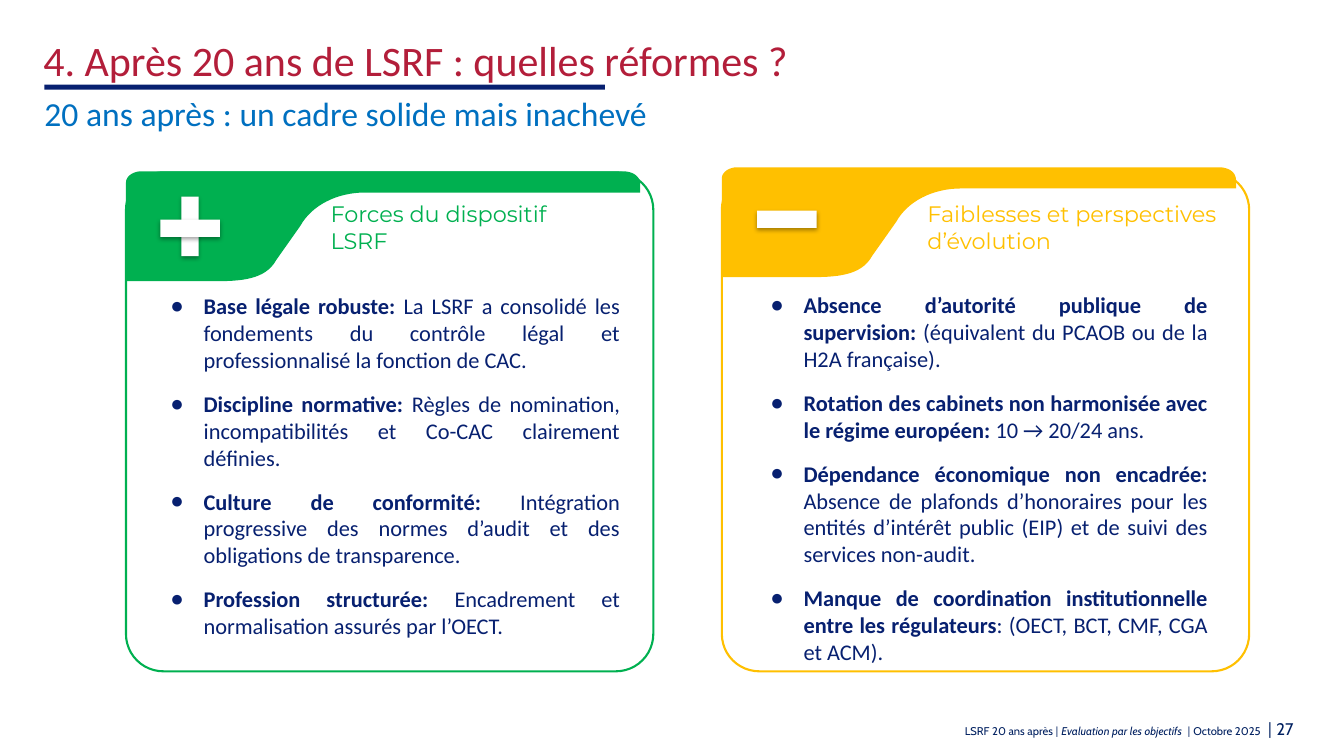
from lxml import etree
from pptx import Presentation
from pptx.dml.color import RGBColor
from pptx.enum.shapes import MSO_SHAPE as Shape
from pptx.enum.text import MSO_ANCHOR as Anchor, MSO_AUTO_SIZE as AutoSize, PP_ALIGN as Align
from pptx.oxml import parse_xml
from pptx.oxml.ns import nsdecls, qn
from pptx.util import Inches, Pt

NAVY = RGBColor(0x07, 0x20, 0x70)
FOOTER_NAVY = RGBColor(0x00, 0x20, 0x60)
BLUE = RGBColor(0x00, 0x70, 0xC0)
RED = RGBColor(0xB3, 0x1E, 0x3A)
GREEN = RGBColor(0x00, 0xB0, 0x50)
AMBER = RGBColor(0xFF, 0xC0, 0x00)
WHITE = RGBColor(0xFF, 0xFF, 0xFF)

STRENGTHS = [
    ("Base légale robuste: ", "La LSRF a consolidé les fondements du contrôle légal et "
     "professionnalisé la fonction de CAC."),
    ("Discipline normative: ", "Règles de nomination, incompatibilités et Co-CAC "
     "clairement définies."),
    ("Culture de conformité:", " Intégration progressive des normes d’audit et des "
     "obligations de transparence."),
    ("Profession structurée: ", "Encadrement et normalisation assurés par l’OECT."),
]
WEAKNESSES = [
    ("Absence d’autorité publique de supervision: ",
     "(équivalent du PCAOB ou de la H2A française)."),
    ("Rotation des cabinets non harmonisée avec le régime européen: ", "10 → 20/24 ans."),
    ("Dépendance économique non encadrée: ", "Absence de plafonds d’honoraires pour les "
     "entités d’intérêt public (EIP) et de suivi des services non-audit."),
    ("Manque de coordination institutionnelle entre les régulateurs",
     ": (OECT, BCT, CMF, CGA et ACM)."),
]
FOOTER = [  # text, font, size, italic
    ("LSRF 20 ans après ", "Cabin", 8, False),
    ("| ", "Lato", 8, False),
    ("Evaluation par les objectifs ", "Cabin", 8, True),
    (" | ", "Lato", 8, False),
    ("Octobre 2025 ", "Cabin", 8, False),
    (" | ", "Lato", 12, False),
    ("27", "Cabin", 12, False),
]
# Header outline: two coordinates make a line, six make a Bézier curve
TAB_START = (5.1, 0.13)
TAB_STEPS = [
    (5.1, 0.21), (2.37, 0.21), (2.09, 0.21, 1.84, 0.34, 1.73, 0.54),
    (1.49, 0.88), (1.38, 1.08, 1.13, 1.09, 0.85, 1.09),
    (0, 1.09), (0, 0.11), (0, 0.05, 0.07, 0, 0.15, 0),
    (4.93, 0), (5.03, 0, 5.1, 0.05, 5.1, 0.13),
]


def place(box, left, top, width, height):
    box.left, box.top = Inches(left), Inches(top)
    box.width, box.height = Inches(width), Inches(height)


def set_frame(frame, insets, anchor=Anchor.TOP):
    frame.word_wrap = True
    frame.auto_size = AutoSize.NONE
    frame.vertical_anchor = anchor
    (frame.margin_left, frame.margin_top,
     frame.margin_right, frame.margin_bottom) = [Inches(inset) for inset in insets]


def add_span(para, text, font, size, color, bold=False, italic=False):
    span = para.add_run()
    span.text = text
    span.font.name, span.font.size = font, Pt(size)
    span.font.bold, span.font.italic = bold, italic
    span.font.color.rgb = color


def add_text_box(page, left, top, width, height, insets, anchor=Anchor.TOP):
    box = page.shapes.add_textbox(*map(Inches, (left, top, width, height)))
    set_frame(box.text_frame, insets, anchor)
    return box.text_frame.paragraphs[0]


def style_solid(shape, color):
    shape.shadow.inherit = False
    shape.fill.solid()
    shape.fill.fore_color.rgb = color
    shape.line.fill.background()


def add_bar(page, left, top, width, height, color):
    bar = page.shapes.add_shape(Shape.RECTANGLE, *map(Inches, (left, top, width, height)))
    style_solid(bar, color)
    return bar


def add_sign_bar(page, left, top, width, height):
    """White bar with a soft shadow below, used for the plus and minus signs."""
    bar = add_bar(page, left, top, width, height, WHITE)
    effects = bar.element.spPr.find(qn("a:effectLst"))
    effects.append(parse_xml(
        f'<a:outerShdw {nsdecls("a")} blurRad="40000" dist="23000" dir="5400000" '
        'rotWithShape="0"><a:srgbClr val="000000"><a:alpha val="35000"/>'
        '</a:srgbClr></a:outerShdw>'))


def curve_points(start, curve, count=16):
    points = [start, curve[0:2], curve[2:4], curve[4:6]]
    for step in range(1, count + 1):
        t = step / count
        weights = ((1 - t) ** 3, 3 * t * (1 - t) ** 2, 3 * t * t * (1 - t), t ** 3)
        yield tuple(sum(w * point[axis] for w, point in zip(weights, points))
                    for axis in (0, 1))


def add_tab(page, left, top, color):
    points = [TAB_START]
    for step in TAB_STEPS:
        points.extend(curve_points(points[-1], step) if len(step) == 6 else [step])
    corners = [(Inches(left + x), Inches(top + y)) for x, y in points]
    builder = page.shapes.build_freeform(*corners[0])
    builder.add_line_segments(corners[1:], close=True)
    style_solid(builder.convert_to_shape(), color)


def add_card(page, left, tab_top, color, heading, heading_left, heading_width):
    frame = page.shapes.add_shape(Shape.ROUNDED_RECTANGLE,
                                  *map(Inches, (left, 1.71, 5.23, 4.95)))
    frame.adjustments[0] = 0.075
    frame.shadow.inherit = False
    frame.fill.background()
    frame.line.color.rgb = color
    frame.line.width = Pt(1.5)
    add_tab(page, left, tab_top, color)
    para = add_text_box(page, heading_left, 1.97, heading_width, 0.57, [0.1] * 4, Anchor.MIDDLE)
    add_span(para, heading, "Montserrat", 16, color)


def set_bullet(para):
    props = para._p.get_or_add_pPr()
    props.set("marL", str(Inches(0.5)))
    props.set("indent", str(Inches(-0.33)))
    color = etree.SubElement(props, qn("a:buClr"))
    etree.SubElement(color, qn("a:srgbClr"), val=str(NAVY))
    etree.SubElement(props, qn("a:buChar"), char="●")


def fill_list(body, left, top, width, height, items):
    place(body, left, top, width, height)
    frame = body.text_frame
    set_frame(frame, [0.1] * 4)
    for number, (lead, detail) in enumerate(items):
        para = frame.add_paragraph() if number else frame.paragraphs[0]
        para.alignment = Align.JUSTIFY
        para.space_before, para.space_after = Pt(0), Pt(12.2)
        set_bullet(para)
        add_span(para, lead, "Calibri", 16, NAVY, bold=True)
        add_span(para, detail, "Calibri", 16, NAVY)


def main():
    deck = Presentation()
    deck.slide_width, deck.slide_height = Inches(13.33), Inches(7.5)
    page = deck.slides.add_slide(deck.slide_layouts[3])
    title, left_list, right_list = page.placeholders

    # Title, underline and subtitle
    place(title, 0.43, 0.33, 12.17, 0.52)
    set_frame(title.text_frame, (0, 0.01, 0, 0))
    para = title.text_frame.paragraphs[0]
    para.alignment = Align.LEFT
    para.space_before = Pt(1)
    add_span(para, "4. Après 20 ans de LSRF : quelles réformes ?", "Calibri", 30, RED)
    add_bar(page, 0.44, 0.84, 5.56, 0.05, NAVY)
    para = add_text_box(page, 0.44, 0.91, 8.39, 0.42, (0, 0.01, 0, 0))
    para.space_before = Pt(1)
    add_span(para, "20 ans après : un cadre solide mais inachevé", "Calibri", 24, BLUE)

    # Strengths card with its plus sign
    add_card(page, 1.25, 1.7, GREEN, "Forces du dispositif LSRF", 3.18, 2.49)
    fill_list(left_list, 1.42, 2.8, 4.83, 3.86, STRENGTHS)
    add_sign_bar(page, 1.8, 1.95, 0.17, 0.59)
    add_sign_bar(page, 1.59, 2.18, 0.59, 0.17)

    # Weaknesses card with its minus sign
    add_card(page, 7.16, 1.66, AMBER, "Faiblesses et perspectives d’évolution", 9.1, 3.16)
    fill_list(right_list, 7.37, 2.79, 4.71, 3.87, WEAKNESSES)
    add_sign_bar(page, 7.51, 2.09, 0.59, 0.17)

    # Footer line
    para = add_text_box(page, 7.16, 7.13, 5.67, 0.2, [0] * 4)
    para.alignment = Align.RIGHT
    for text, font, size, italic in FOOTER:
        add_span(para, text, font, size, FOOTER_NAVY, italic=italic)

    deck.save("out.pptx")


if __name__ == "__main__":
    main()
